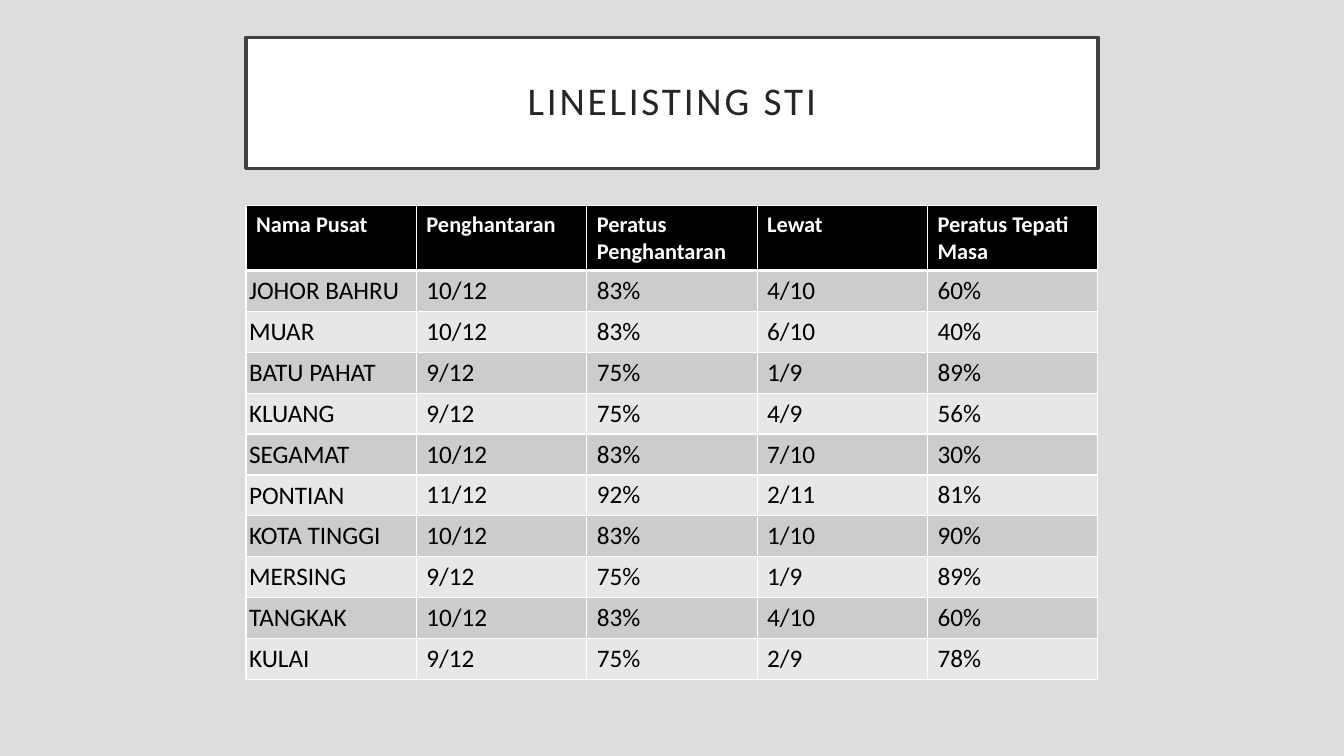
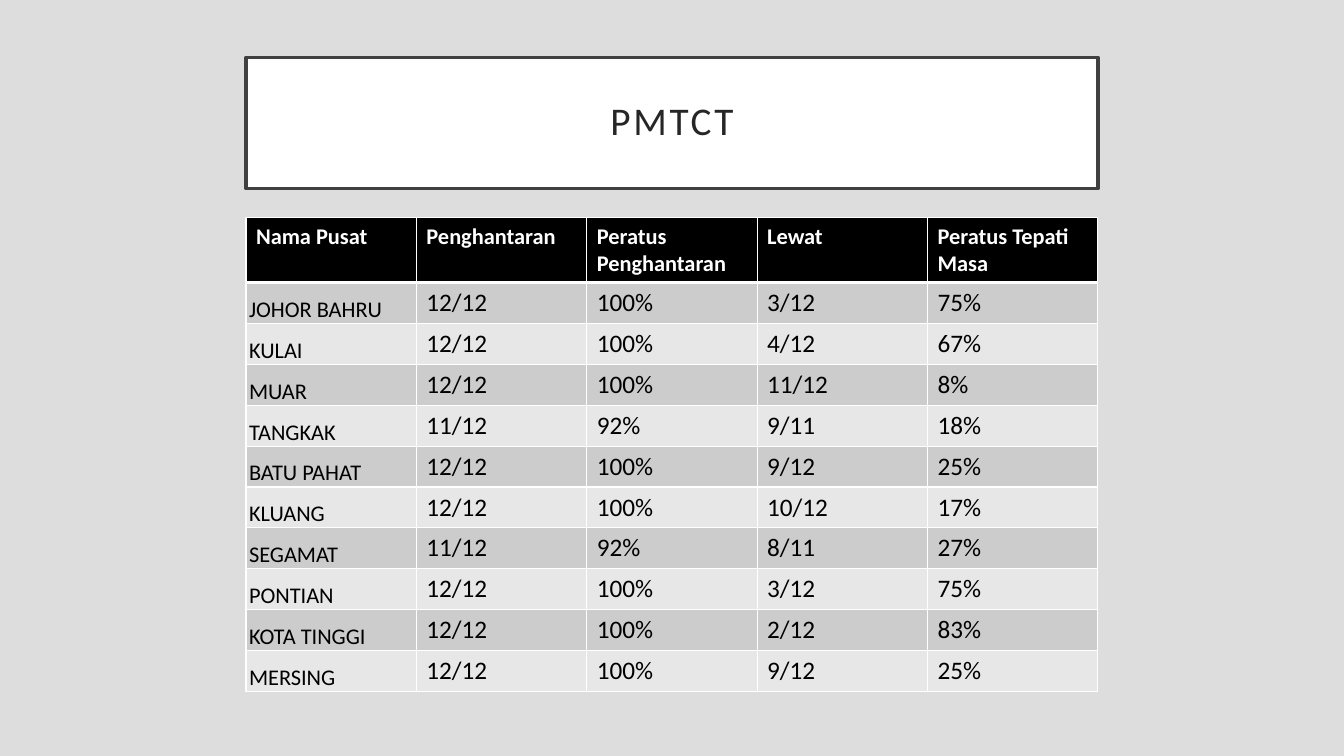
from lxml import etree
from pptx import Presentation
from pptx.dml.color import RGBColor
from pptx.enum.text import MSO_ANCHOR, MSO_AUTO_SIZE, PP_ALIGN
from pptx.oxml.ns import qn
from pptx.util import Inches, Pt

TOP, MIDDLE, BOTTOM = MSO_ANCHOR.TOP, MSO_ANCHOR.MIDDLE, MSO_ANCHOR.BOTTOM
CENTER = PP_ALIGN.CENTER
NO_AUTOFIT = MSO_AUTO_SIZE.NONE

FONT = "Calibri"
BACKGROUND, WHITE, BLACK = "DDDDDD", "FFFFFF", "000000"
TITLE_TEXT, TITLE_LINE = "262626", "404040"
BANDS = ("CCCCCC", "E7E7E7")

LEFT, WIDTH = 2.44, 8.45
TITLE_HEIGHT = 1.3
HEADER_HEIGHT, ROW_HEIGHT = 0.64, 0.4

HEADINGS = ("Nama Pusat", "Penghantaran", "Peratus Penghantaran", "Lewat", "Peratus Tepati Masa")

STI_ROWS = [
    ("JOHOR BAHRU", "10/12", "83%", "4/10", "60%"),
    ("MUAR", "10/12", "83%", "6/10", "40%"),
    ("BATU PAHAT", "9/12", "75%", "1/9", "89%"),
    ("KLUANG", "9/12", "75%", "4/9", "56%"),
    ("SEGAMAT", "10/12", "83%", "7/10", "30%"),
    ("PONTIAN", "11/12", "92%", "2/11", "81%"),
    ("KOTA TINGGI", "10/12", "83%", "1/10", "90%"),
    ("MERSING", "9/12", "75%", "1/9", "89%"),
    ("TANGKAK", "10/12", "83%", "4/10", "60%"),
    ("KULAI", "9/12", "75%", "2/9", "78%"),
]

PMTCT_ROWS = [
    ("JOHOR BAHRU", "12/12", "100%", "3/12", "75%"),
    ("KULAI", "12/12", "100%", "4/12", "67%"),
    ("MUAR", "12/12", "100%", "11/12", "8%"),
    ("TANGKAK", "11/12", "92%", "9/11", "18%"),
    ("BATU PAHAT", "12/12", "100%", "9/12", "25%"),
    ("KLUANG", "12/12", "100%", "10/12", "17%"),
    ("SEGAMAT", "11/12", "92%", "8/11", "27%"),
    ("PONTIAN", "12/12", "100%", "3/12", "75%"),
    ("KOTA TINGGI", "12/12", "100%", "2/12", "83%"),
    ("MERSING", "12/12", "100%", "9/12", "25%"),
]


def paint(fill, color):
    fill.solid()
    fill.fore_color.rgb = RGBColor.from_string(color)


def add_run(paragraph, text, size, color, bold=False):
    run = paragraph.add_run()
    run.text = text
    run.font.name = FONT
    run.font.size = Pt(size)
    run.font.bold = bold
    paint(run.font.fill, color)
    return run


def set_borders(cell, top=1, bottom=1):
    """Draw white cell borders; call before the cell is filled."""
    properties = cell._tc.get_or_add_tcPr()
    for side, points in (("L", 1), ("R", 1), ("T", top), ("B", bottom)):
        line = etree.SubElement(properties, qn(f"a:ln{side}"), w=str(Pt(points)))
        solid = etree.SubElement(line, qn("a:solidFill"))
        etree.SubElement(solid, qn("a:srgbClr"), val=WHITE)


def place_title(slide, text, top):
    title = slide.shapes.title
    title.left, title.top = Inches(LEFT), Inches(top)
    title.width, title.height = Inches(WIDTH), Inches(TITLE_HEIGHT)
    paint(title.fill, WHITE)
    paint(title.line.fill, TITLE_LINE)
    title.line.width = Pt(2.5)

    frame = title.text_frame
    frame.auto_size = NO_AUTOFIT
    frame.word_wrap = True
    frame.vertical_anchor = MIDDLE
    frame.margin_left = frame.margin_right = Inches(0.2)
    frame.margin_top = frame.margin_bottom = Inches(0.2)
    paragraph = frame.paragraphs[0]
    paragraph.alignment = CENTER
    paragraph.line_spacing = 0.9
    run = add_run(paragraph, text, 28, TITLE_TEXT)
    run.font._element.set("spc", "200")


def fill_header(table):
    for cell, heading in zip(table.rows[0].cells, HEADINGS):
        set_borders(cell, bottom=3)
        paint(cell.fill, BLACK)
        cell.vertical_anchor = TOP
        add_run(cell.text_frame.paragraphs[0], heading, 16, WHITE, bold=True)


def fill_centre_row(table, index, values, name_size, name_anchor):
    for column, value in enumerate(values):
        cell = table.cell(index, column)
        set_borders(cell, top=3 if index == 1 else 1)
        paint(cell.fill, BANDS[(index - 1) % 2])
        is_name = column == 0
        if is_name:
            cell.margin_left = cell.margin_right = Inches(0.03)
            cell.margin_top = cell.margin_bottom = 0
        cell.vertical_anchor = name_anchor if is_name else TOP
        add_run(cell.text_frame.paragraphs[0], value, name_size if is_name else 18, BLACK)


def place_table(slide, rows, top, name_size, name_anchor):
    height = HEADER_HEIGHT + ROW_HEIGHT * len(rows)
    table = slide.shapes.add_table(
        len(rows) + 1, len(HEADINGS), Inches(LEFT), Inches(top), Inches(WIDTH), Inches(height)
    ).table
    for column in table.columns:
        column.width = Inches(WIDTH / len(HEADINGS))
    for index, row in enumerate(table.rows):
        row.height = Inches(ROW_HEIGHT if index else HEADER_HEIGHT)
    fill_header(table)
    for index, values in enumerate(rows, start=1):
        fill_centre_row(table, index, values, name_size, name_anchor)


def add_report_slide(prs, title, title_top, rows, table_top, name_size, name_anchor):
    slide = prs.slides.add_slide(prs.slide_layouts.get_by_name("Title Only"))
    place_title(slide, title, title_top)
    place_table(slide, rows, table_top, name_size, name_anchor)


def main():
    prs = Presentation()
    prs.slide_width, prs.slide_height = Inches(13.33), Inches(7.5)
    paint(prs.slide_master.background.fill, BACKGROUND)
    add_report_slide(prs, "LINELISTING STI", 0.37, STI_ROWS, 2.04, 18, MIDDLE)
    add_report_slide(prs, "PMTCT", 0.57, PMTCT_ROWS, 2.16, 16, BOTTOM)
    prs.save("out.pptx")


if __name__ == "__main__":
    main()
